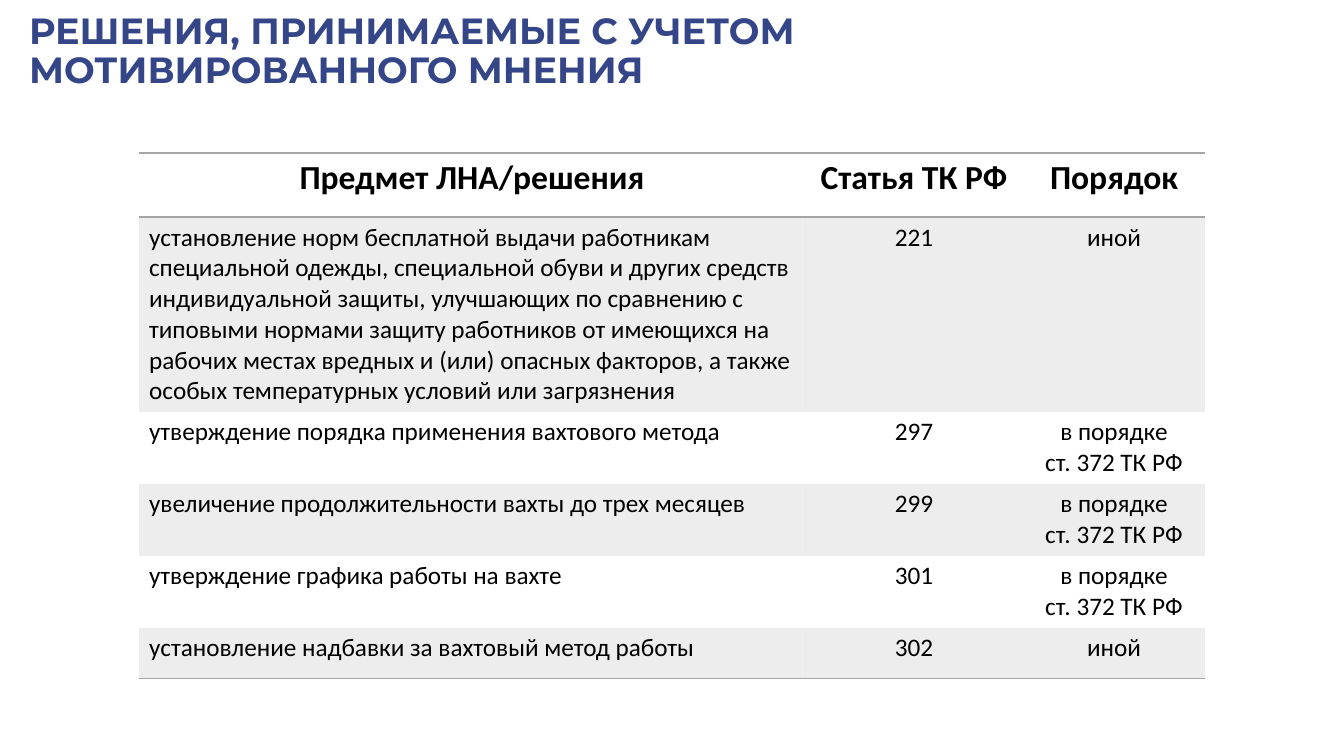
from lxml.etree import SubElement
from pptx import Presentation
from pptx.dml.color import RGBColor
from pptx.enum.text import MSO_ANCHOR, MSO_AUTO_SIZE, PP_ALIGN
from pptx.oxml.ns import qn
from pptx.util import Pt

TITLE = "РЕШЕНИЯ, ПРИНИМАЕМЫЕ С УЧЕТОМ МОТИВИРОВАННОГО МНЕНИЯ"
BY_ARTICLE = "в порядке\nст. 372 ТК РФ"
ROWS = [
    ("Предмет ЛНА/решения", "Статья ТК РФ", "Порядок"),
    ("установление норм бесплатной выдачи работникам специальной одежды, "
     "специальной обуви и других средств индивидуальной защиты, улучшающих "
     "по сравнению с типовыми нормами защиту работников от имеющихся на "
     "рабочих местах вредных и (или) опасных факторов, а также особых "
     "температурных условий или загрязнения", "221", "иной"),
    ("утверждение порядка применения вахтового метода", "297", BY_ARTICLE),
    ("увеличение продолжительности вахты до трех месяцев", "299", BY_ARTICLE),
    ("утверждение графика работы на вахте", "301", BY_ARTICLE),
    ("установление надбавки за вахтовый метод работы", "302", "иной"),
]

PAGE_SIZE = (1344, 756)
TITLE_BOX = (19, 19, 1049, 67)
TABLE_CORNER = (139, 153)
COLUMN_WIDTHS = (666, 218, 182)
ROW_HEIGHTS = (64, 195, 72, 72, 72, 51)
BLUE, BLACK, GREY = "344688", "000000", "A5A5A5"
BAND_ALPHA = 20
PLAIN_TABLE_STYLE = "{2D5ABB26-0587-4C30-8999-92F81FD0307C}"


def px(length):
    return round(length * 914400 / 100.8)


def color(value):
    return RGBColor.from_string(value)


def add_span(para, text, font_name, size, bold, ink):
    span = para.add_run()
    span.text = text
    span.font.name = font_name
    span.font.size = Pt(size)
    span.font.bold = bold
    span.font.color.rgb = color(ink)


def add_title(page):
    box = page.shapes.title
    box.left, box.top, box.width, box.height = map(px, TITLE_BOX)
    frame = box.text_frame
    frame.word_wrap = True
    frame.auto_size = MSO_AUTO_SIZE.NONE
    frame.vertical_anchor = MSO_ANCHOR.MIDDLE
    para = frame.paragraphs[0]
    para.alignment = PP_ALIGN.LEFT
    para.line_spacing = 0.9
    add_span(para, TITLE, "Montserrat", 26, True, BLUE)


def add_border(cell, side):
    """Draw a 1 pt grey edge; side is lnT or lnB. Call before setting the fill."""
    line = SubElement(cell._tc.get_or_add_tcPr(), qn(f"a:{side}"), w=str(Pt(1)))
    fill = SubElement(line, qn("a:solidFill"))
    SubElement(fill, qn("a:srgbClr"), val=GREY)


def fill_band(cell):
    cell.fill.solid()
    cell.fill.fore_color.rgb = color(GREY)
    shade = cell._tc.tcPr.find(f"{qn('a:solidFill')}/{qn('a:srgbClr')}")
    SubElement(shade, qn("a:alpha"), val=str(BAND_ALPHA * 1000))


def fill_cell(cell, text, row, column):
    header = row == 0
    for index, line in enumerate(text.split("\n")):
        frame = cell.text_frame
        para = frame.add_paragraph() if index else frame.paragraphs[0]
        centred = header or column > 0
        para.alignment = PP_ALIGN.CENTER if centred else PP_ALIGN.LEFT
        add_span(para, line, "Calibri", 24 if header else 18, header, BLACK)
    if header:
        add_border(cell, "lnT")
    if row in (0, len(ROWS) - 1):
        add_border(cell, "lnB")
    if row % 2:
        fill_band(cell)
    else:
        cell.fill.background()


def add_decisions_table(page):
    frame = page.shapes.add_table(
        len(ROWS), len(COLUMN_WIDTHS), *map(px, TABLE_CORNER),
        px(sum(COLUMN_WIDTHS)), px(sum(ROW_HEIGHTS)))
    table = frame.table
    table.first_row = table.horz_banding = False
    table._tbl.tblPr.find(qn("a:tableStyleId")).text = PLAIN_TABLE_STYLE
    for column, width in zip(table.columns, COLUMN_WIDTHS):
        column.width = px(width)
    for table_row, height in zip(table.rows, ROW_HEIGHTS):
        table_row.height = px(height)
    for row, texts in enumerate(ROWS):
        for column, text in enumerate(texts):
            fill_cell(table.cell(row, column), text, row, column)


def main():
    deck = Presentation()
    deck.slide_width, deck.slide_height = map(px, PAGE_SIZE)
    page = deck.slides.add_slide(deck.slide_layouts[5])
    add_title(page)
    add_decisions_table(page)
    deck.save("out.pptx")


if __name__ == "__main__":
    main()
